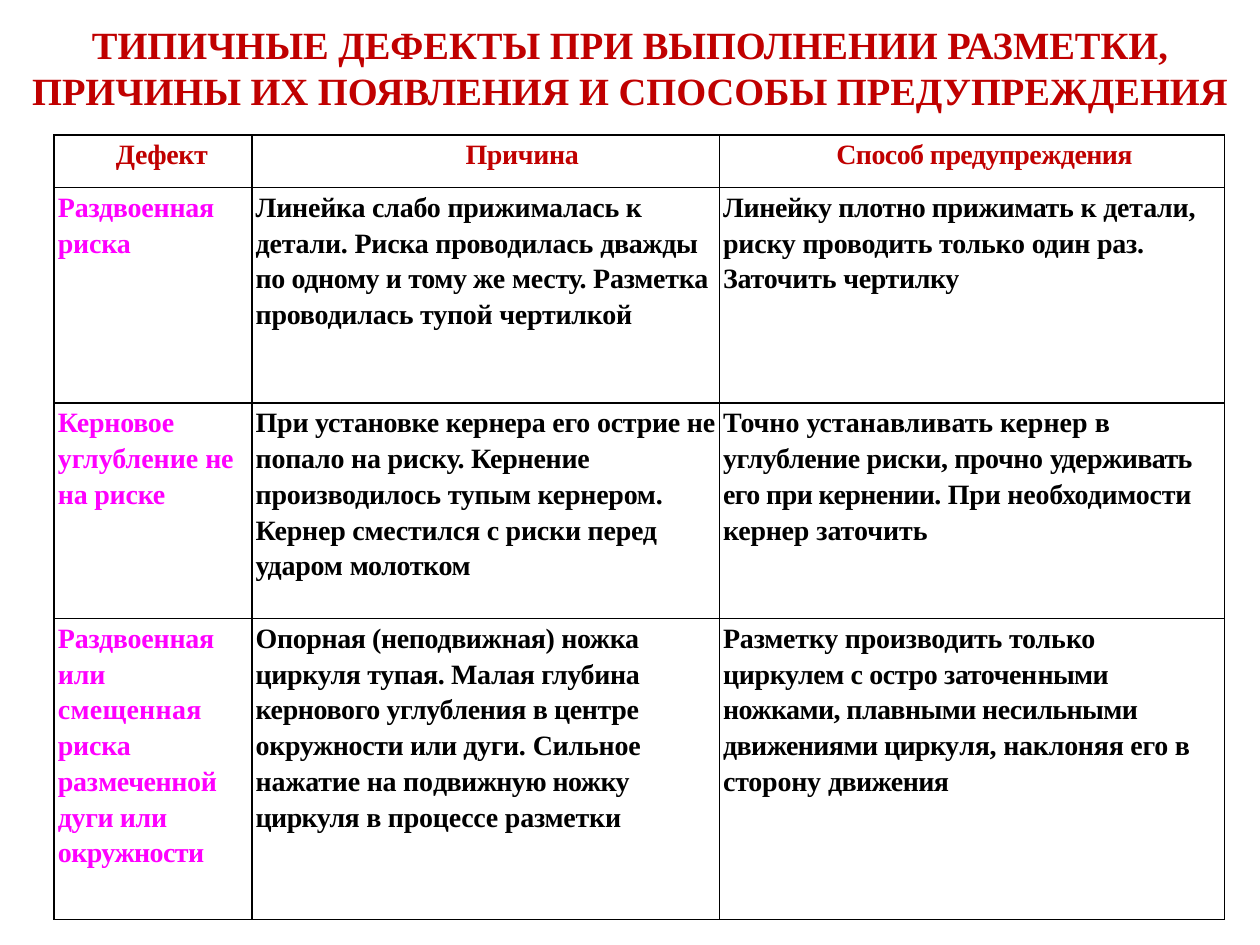
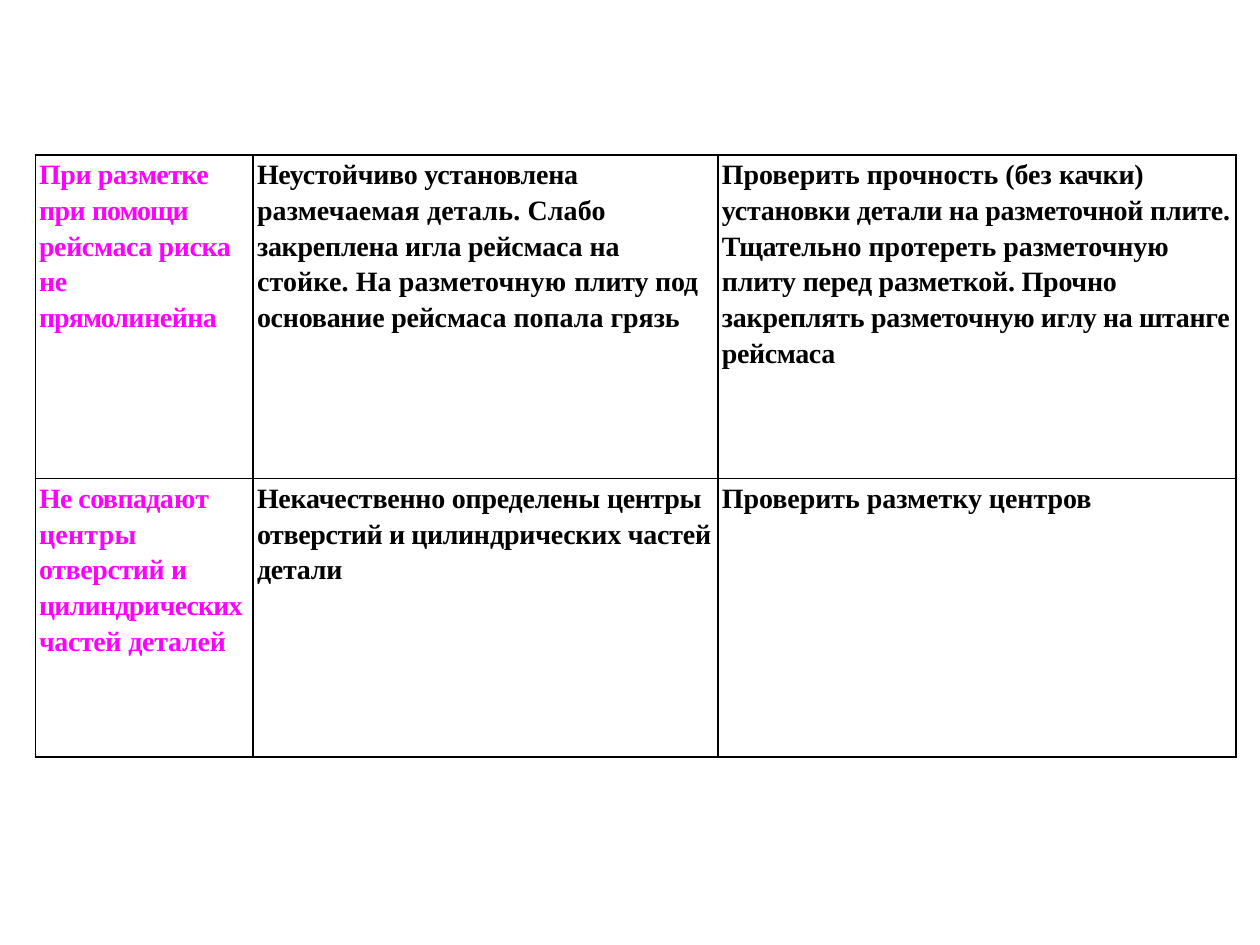
from lxml.etree import SubElement
from pptx import Presentation
from pptx.dml.color import RGBColor
from pptx.enum.text import MSO_ANCHOR, MSO_AUTO_SIZE, PP_ALIGN
from pptx.oxml.ns import qn
from pptx.util import Inches, Pt

FONT = "Times New Roman"
RED, MAGENTA, BLACK, WHITE = "C00000", "FF00FF", "000000", "FFFFFF"
TITLE_SIZE, TABLE_SIZE = 22, 16
CELL_INSET = 0.03
TITLE_ONLY, BLANK = 5, 6

TITLE = ("ТИПИЧНЫЕ ДЕФЕКТЫ ПРИ ВЫПОЛНЕНИИ РАЗМЕТКИ, "
         "ПРИЧИНЫ ИХ ПОЯВЛЕНИЯ И СПОСОБЫ ПРЕДУПРЕЖДЕНИЯ")

# Every cell is a list of runs: (text, letter spacing in points).
HEADER = [
    [("Дефект", -0.2)],
    [("Причина", -0.2)],
    [("Способ предупреждения", -0.3)],
]
HEADER_INDENTS = [0.14, 0.58, 0.2]

SCRIBING_DEFECTS = [
    [
        [("Раздвоенная риска", -0.1)],
        [("Линейка слабо прижималась к детали. Риска проводилась ", -0.1),
         ("дважды по одному и тому же ", -0.2),
         ("месту. Разметка проводилась тупой чертилкой", -0.1)],
        [("Линейку плотно прижимать ", -0.2),
         ("к детали, риску проводить только один раз. Заточить ", -0.1),
         ("чертилку", -0.2)],
    ],
    [
        [("Керновое ", -0.1), ("углубление ", 0), ("не на риске", -0.1)],
        [("При установке кернера его острие не попало на риску. "
          "Кернение производилось тупым кернером. "
          "Кернер сместился с риски перед ударом ", -0.1),
         ("молотком", -0.2)],
        [("Точно устанавливать кернер ", 0),
         ("в углубление риски, прочно ", -0.2),
         ("удерживать его при кернении. ", -0.3),
         ("При необходимости кернер ", -0.1),
         ("заточить", 0)],
    ],
    [
        [("Раздвоенная или ", -0.1), ("смещенная ", 0.2), ("риска раз", -0.1),
         ("меченной дуги или ", -0.2), ("окружности", -0.3)],
        [("Опорная (неподвижная) ножка циркуля тупая. Малая глубина "
          "кернового углубления в центре окружности или дуги. ", -0.2),
         ("Сильное нажатие на по", -0.1),
         ("движную ножку циркуля ", -0.3),
         ("в процессе разметки", -0.1)],
        [("Разметку производить толь", -0.1),
         ("ко циркулем с остро заточен", -0.2),
         ("ными ножками, плавными несильными движениями цирку", -0.3),
         ("ля, наклоняя его в сторону ", -0.1),
         ("движения", -0.3)],
    ],
]

GAUGE_DEFECTS = [
    [
        [("При раз", -0.2), ("метке при ", -0.3), ("помощи ", -0.6),
         ("рейсмаса риска не ", -0.2), ("прямоли", -0.5), ("нейна", -0.3)],
        [("Неустойчиво установлена ", -0.1),
         ("размечаемая деталь. Слабо ", 0.1),
         ("закреплена игла рейсмаса ", -0.1),
         ("на стойке. На разметочную ", 0.1),
         ("плиту под основание рейс", -0.1),
         ("маса попала грязь", 0)],
        [("Проверить прочность (без ", 0),
         ("качки) установки детали на разметочной плите. Тщатель", -0.1),
         ("но протереть разметочную ", 0),
         ("плиту перед разметкой. Прочно закреплять разметоч", -0.1),
         ("ную иглу на штанге рейсмаса", -0.2)],
    ],
    [
        [("Не совпада", -0.3), ("ют центры ", 0.2), ("отверстий и ", -0.2),
         ("цилиндри", -0.4), ("ческих ", -0.5), ("частей ", -0.2),
         ("деталей", -0.1)],
        [("Некачественно определены ", -0.1),
         ("центры отверстий и цилин", -0.2),
         ("дрических частей детали", -0.1)],
        [("Проверить разметку центров", 0)],
    ],
]


def rgb(value):
    return RGBColor.from_string(value)


def add_run(paragraph, text, size, color, spacing=0):
    run = paragraph.add_run()
    run.text = text
    run.font.name = FONT
    run.font.size = Pt(size)
    run.font.bold = True
    run.font.color.rgb = rgb(color)
    if spacing:
        run._r.get_or_add_rPr().set("spc", str(round(spacing * 100)))


def add_borders(cell, color=BLACK, width=1):
    properties = cell._tc.get_or_add_tcPr()
    for position, side in enumerate(("lnL", "lnR", "lnT", "lnB")):
        line = SubElement(properties, qn(f"a:{side}"), w=str(Pt(width)))
        fill = SubElement(line, qn("a:solidFill"))
        SubElement(fill, qn("a:srgbClr"), val=color)
        properties.insert(position, line)  # borders must precede the cell fill


def fill_cell(cell, runs, color, header_indent=None):
    """Format one cell; a header indent also centres the text."""
    cell.fill.solid()
    cell.fill.fore_color.rgb = rgb(WHITE)
    cell.margin_left = cell.margin_right = Inches(CELL_INSET)
    cell.margin_top = cell.margin_bottom = 0
    add_borders(cell)
    paragraph = cell.text_frame.paragraphs[0]
    paragraph.line_spacing = 1.15
    if header_indent is not None:
        paragraph.alignment = PP_ALIGN.CENTER
        paragraph._p.get_or_add_pPr().set("marL", str(Inches(header_indent)))
    for text, spacing in runs:
        add_run(paragraph, text, TABLE_SIZE, color, spacing)


def add_defect_table(slide, left, top, widths, heights, rows, header=None):
    all_rows = ([header] if header else []) + rows
    table = slide.shapes.add_table(
        len(all_rows), len(widths), Inches(left), Inches(top),
        Inches(sum(widths)), Inches(sum(heights))).table
    table.first_row = table.horz_banding = False
    for column, width in zip(table.columns, widths):
        column.width = Inches(width)
    for row, height in zip(table.rows, heights):
        row.height = Inches(height)
    for row_index, cells in enumerate(all_rows):
        for column_index, runs in enumerate(cells):
            cell = table.cell(row_index, column_index)
            if header and row_index == 0:
                fill_cell(cell, runs, RED, HEADER_INDENTS[column_index])
            else:
                fill_cell(cell, runs, BLACK if column_index else MAGENTA)


def place_title(slide, text, left, top, width, height):
    title = slide.shapes.title
    title.left, title.top = Inches(left), Inches(top)
    title.width, title.height = Inches(width), Inches(height)
    frame = title.text_frame
    frame.word_wrap = True
    frame.auto_size = MSO_AUTO_SIZE.NONE
    frame.vertical_anchor = MSO_ANCHOR.MIDDLE
    paragraph = frame.paragraphs[0]
    paragraph.alignment = PP_ALIGN.CENTER
    add_run(paragraph, text, TITLE_SIZE, RED)


def add_slide(presentation, layout_index):
    slide = presentation.slides.add_slide(presentation.slide_layouts[layout_index])
    slide.background.fill.solid()
    slide.background.fill.fore_color.rgb = rgb(WHITE)
    return slide


def main():
    presentation = Presentation()
    presentation.slide_width, presentation.slide_height = Inches(10), Inches(7.5)

    scribing_slide = add_slide(presentation, TITLE_ONLY)
    place_title(scribing_slide, TITLE, 0, 0, 10, 1.07)
    add_defect_table(scribing_slide, 0.43, 1.07, [1.57, 3.71, 4.01],
                     [0.42, 1.71, 1.71, 2.39], SCRIBING_DEFECTS, HEADER)

    gauge_slide = add_slide(presentation, BLANK)
    add_defect_table(gauge_slide, 0.28, 1.23, [1.73, 3.69, 4.11],
                     [2.57, 2.21], GAUGE_DEFECTS)

    presentation.save("out.pptx")


if __name__ == "__main__":
    main()
